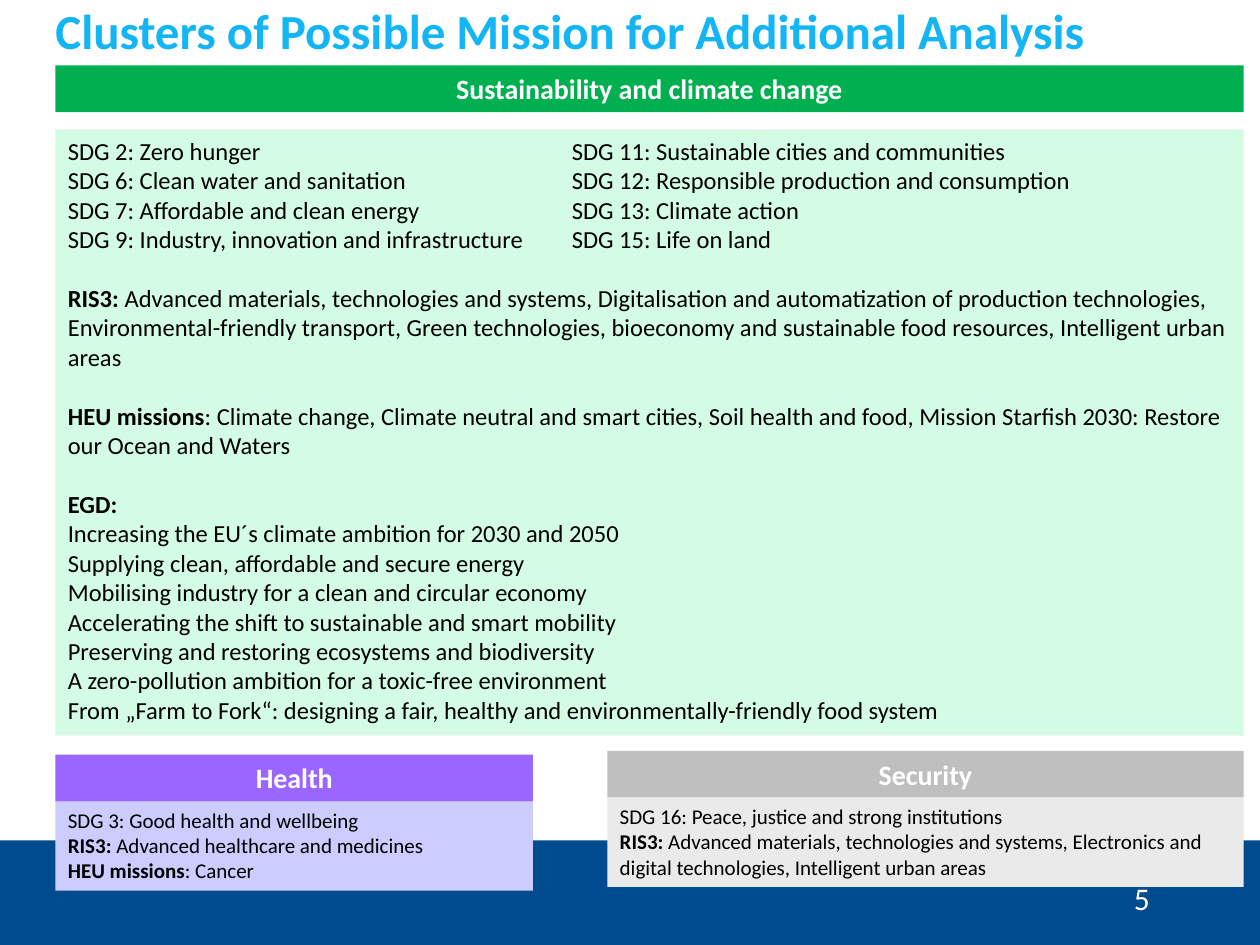
import pptx
import pptx.util
import pptx.dml.color
import pptx.enum.shapes
import pptx.enum.text
import pptx.oxml
import pptx.oxml.ns

Inches, Pt = pptx.util.Inches, pptx.util.Pt
RGB = pptx.dml.color.RGBColor
ALIGN = pptx.enum.text.PP_ALIGN
ANCHOR = pptx.enum.text.MSO_ANCHOR
FIT = pptx.enum.text.MSO_AUTO_SIZE

NAVY = RGB(0x00, 0x4B, 0x8D)
SKY = RGB(0x13, 0xB5, 0xF4)
WHITE = RGB(0xFF, 0xFF, 0xFF)
BLACK = RGB(0x00, 0x00, 0x00)
GREEN = RGB(0x00, 0xB0, 0x50)
MINT = RGB(0xD4, 0xFC, 0xE4)
PURPLE = RGB(0x99, 0x66, 0xFF)
LILAC = RGB(0xCC, 0xCC, 0xFF)
GREY = RGB(0xBF, 0xBF, 0xBF)
PALE_GREY = RGB(0xEA, 0xEA, 0xEA)
EDGE = RGB(0xF2, 0xF2, 0xF2)

LEFT, RIGHT_COL = 0.44, 4.82
FULL_W, HEALTH_W, SECURITY_W = 9.43, 3.79, 5.05
HEAD_H, SMALL_H = 0.37, 0.71


def add_box(x, y, w, h, fill):
    sp = s.shapes.add_shape(pptx.enum.shapes.MSO_SHAPE.RECTANGLE,
                            Inches(x), Inches(y), Inches(w), Inches(h))
    sp.shadow.inherit = False
    sp.fill.solid()
    sp.fill.fore_color.rgb = fill
    sp.line.fill.background()
    return sp


def write(tf, lines, size, color, align=ALIGN.LEFT):
    """Fill tf with one paragraph for each (bold lead, plain rest) pair."""
    for name, value in {"word_wrap": True, "vertical_anchor": ANCHOR.TOP,
                        "auto_size": FIT.SHAPE_TO_FIT_TEXT}.items():
        setattr(tf, name, value)
    for i, parts in enumerate(lines):
        p = tf.add_paragraph() if i else tf.paragraphs[0]
        p.alignment = align
        for text, bold in zip(parts, (True, False)):
            if text:
                r = p.add_run()
                r.text = text
                r.font.color.rgb = color
                for name, value in {"name": "Calibri", "size": Pt(size),
                                    "bold": bold}.items():
                    setattr(r.font, name, value)


prs = pptx.Presentation()
prs.slide_width, prs.slide_height = Inches(10), Inches(7.5)
s = prs.slides.add_slide(prs.slide_layouts[5])
s.background.fill.solid()
s.background.fill.fore_color.rgb = NAVY

# White page area, placed behind the title
page = add_box(0, 0, 10, 6.67, WHITE)
s.shapes.title.element.addprevious(page.element)

number = s.shapes.add_textbox(Inches(8.9), Inches(6.93), Inches(0.5), Inches(0.4))
write(number.text_frame, [("", "5")], 18, WHITE)

# Health and security details
health = [
    ("", "SDG 3: Good health and wellbeing"),
    ("RIS3: ", "Advanced healthcare and medicines"),
    ("HEU missions", ": Cancer"),
]
security = [
    ("", "SDG 16: Peace, justice and strong institutions"),
    ("RIS3: ", "Advanced materials, technologies and systems, Electronics and "
               "digital technologies, Intelligent urban areas"),
]
for x, y, w, fill, lines in [
    (LEFT, 6.36, HEALTH_W, LILAC, health),
    (RIGHT_COL, 6.33, SECURITY_W, PALE_GREY, security),
]:
    write(add_box(x, y, w, SMALL_H, fill).text_frame, lines, 12, BLACK)

# Cluster headings
for x, y, w, fill, text in [
    (LEFT, 5.99, HEALTH_W, PURPLE, "Health"),
    (RIGHT_COL, 5.96, SECURITY_W, GREY, "Security"),
    (LEFT, 0.52, FULL_W, GREEN, "Sustainability and climate change"),
]:
    sp = add_box(x, y, w, HEAD_H, fill)
    write(sp.text_frame, [(text, "")], 16, WHITE, ALIGN.CENTER)

# Sustainability details: goals in two tabbed columns, then three sections
goals = [
    ("SDG 2: Zero hunger", "SDG 11: Sustainable cities and communities"),
    ("SDG 6: Clean water and sanitation",
     "SDG 12: Responsible production and consumption"),
    ("SDG 7: Affordable and clean energy", "SDG 13: Climate action"),
    ("SDG 9: Industry, innovation and infrastructure", "SDG 15: Life on land"),
]
sections = [
    ("RIS3: ", "Advanced materials, technologies and systems, Digitalisation and "
               "automatization of production technologies, Environmental-friendly "
               "transport, Green technologies, bioeconomy and sustainable food "
               "resources, Intelligent urban areas"),
    ("HEU missions", ": Climate change, Climate neutral and smart cities, Soil "
                     "health and food, Mission Starfish 2030: Restore our Ocean "
                     "and Waters"),
    ("EGD:", ""),
]
deal = [
    "Increasing the EU´s climate ambition for 2030 and 2050",
    "Supplying clean, affordable and secure energy",
    "Mobilising industry for a clean and circular economy",
    "Accelerating the shift to sustainable and smart mobility",
    "Preserving and restoring ecosystems and biodiversity",
    "A zero-pollution ambition for a toxic-free environment",
    "From „Farm to Fork“: designing a fair, healthy and environmentally-friendly "
    "food system",
]
sp = add_box(LEFT, 1.03, FULL_W, 4.81, MINT)
sp.line.color.rgb = EDGE
sp.line.width = Pt(0.75)
tf = sp.text_frame
write(tf, [("", "\t".join(pair)) for pair in goals] + sections
      + [("", text) for text in deal], 14, BLACK)
for p in tf.paragraphs[:len(goals)]:
    tabs = pptx.oxml.parse_xml(
        f'<a:tabLst {pptx.oxml.ns.nsdecls("a")}>'
        f'<a:tab pos="{Inches(4)}" algn="l"/></a:tabLst>')
    p._p.get_or_add_pPr().append(tabs)
for p in tf.paragraphs[len(goals):len(goals) + len(sections)]:
    p.space_before = Pt(16.8)

# Title
title = s.shapes.title
for name, value in {"left": LEFT, "top": 0, "width": 9.01, "height": 0.47}.items():
    setattr(title, name, Inches(value))
tf = title.text_frame
for side in ("left", "top", "right", "bottom"):
    setattr(tf, f"margin_{side}", 0)
write(tf, [("Clusters of Possible Mission for Additional Analysis", "")], 28, SKY)

prs.save("out.pptx")
